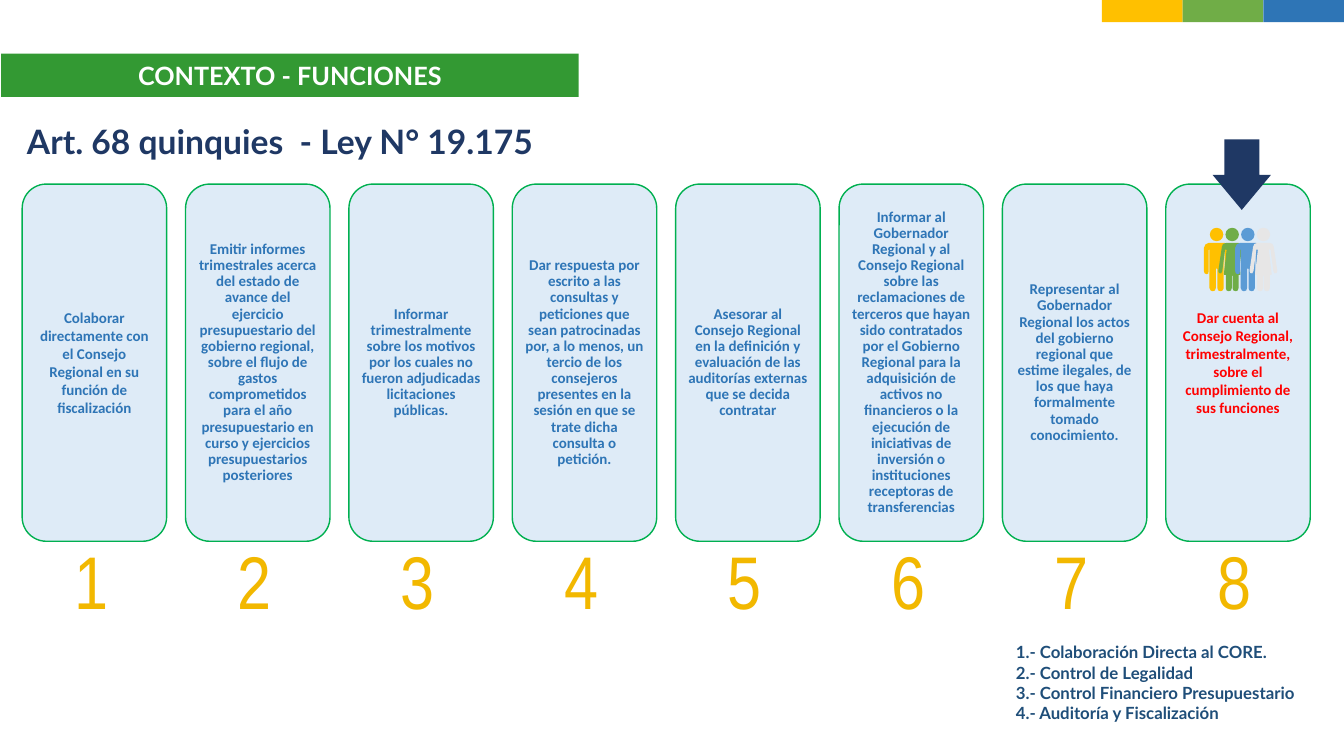
from dataclasses import dataclass

from lxml import etree
from pptx import Presentation
from pptx import util as u
from pptx.dml import color
from pptx.enum import shapes, text
from pptx.oxml import ns


@dataclass(frozen=True)
class Theme:
    """Colours, fonts and type sizes of the slide."""
    white: str = "FFFFFF"
    yellow: str = "FFC000"
    green: str = "70AD47"
    blue: str = "2E75B6"
    sky: str = "5B9BD5"
    grey: str = "E7E6E6"
    banner: str = "339933"
    navy: str = "1F3864"
    legend: str = "1F4E79"
    card: str = "DEEBF7"
    card_line: str = "00B050"
    alert: str = "FF0000"
    number: str = "F2B800"
    heading_font: str = "Lato"
    card_font: str = "Calibri"
    number_font: str = "Arial Narrow"
    banner_size: float = 18
    heading_size: float = 24
    card_size: float = 10.7
    number_size: float = 53.3
    legend_size: float = 12


THEME = Theme()

FUNCTIONS = [
    "Colaborar directamente con el Consejo Regional en su función de fiscalización",
    "Emitir informes trimestrales acerca del estado de avance del ejercicio presupuestario del gobierno "
    "regional, sobre el flujo de gastos comprometidos para el año presupuestario en curso y ejercicios "
    "presupuestarios posteriores",
    "Informar trimestralmente sobre los motivos por los cuales no fueron adjudicadas licitaciones públicas.",
    "Dar respuesta por escrito a las consultas y peticiones que sean patrocinadas por, a lo menos, un tercio "
    "de los consejeros presentes en la sesión en que se trate dicha consulta o petición.",
    "Asesorar al Consejo Regional en la definición y evaluación de las auditorías externas que se decida contratar",
    "Informar al Gobernador Regional y al Consejo Regional sobre las reclamaciones de terceros que hayan sido "
    "contratados por el Gobierno Regional para la adquisición de activos no financieros o la ejecución de "
    "iniciativas de inversión o instituciones receptoras de transferencias",
    "Representar al Gobernador Regional los actos del gobierno regional que estime ilegales, de los que haya "
    "formalmente tomado conocimiento.",
    "Dar cuenta al Consejo Regional, trimestralmente, sobre el cumplimiento de sus funciones",
]

ROLES = [
    "1.- Colaboración Directa al CORE.",
    "2.- Control de Legalidad",
    "3.- Control Financiero Presupuestario",
    "4.- Auditoría y Fiscalización",
]

TROUSERS = [
    (0.2, 0.38), (0.28, 0.42), (0.32, 0.51), (0.32, 1.09), (0.3, 1.15), (0.25, 1.17),
    (0.21, 1.15), (0.2, 1.09), (0.2, 0.56), (0.19, 0.54), (0.18, 0.56), (0.18, 1.52),
    (0.15, 1.58), (0.1, 1.6), (0.04, 1.58), (0.02, 1.52), (0.02, 1.04), (0, 1.02),
]
DRESS = [
    (0.15, 0.38), (0.23, 0.41), (0.26, 0.48), (0.35, 1.09), (0.33, 1.14), (0.28, 1.15),
    (0.25, 1.09), (0.18, 0.56), (0.16, 0.54), (0.14, 0.56), (0.21, 1.17), (0.2, 1.19),
    (0.16, 1.19), (0.16, 1.52), (0.14, 1.58), (0.09, 1.6), (0.03, 1.58), (0.01, 1.52),
    (0.01, 1.22), (0, 1.19),
]


def paint(shape, fill, line=None):
    """Give a shape a flat fill, an optional outline and no shadow."""
    shape.shadow.inherit = False
    shape.fill.solid()
    shape.fill.fore_color.rgb = color.RGBColor.from_string(fill)
    if line:
        shape.line.color.rgb = color.RGBColor.from_string(line)
        shape.line.width = u.Pt(1)
    else:
        shape.line.fill.background()
    return shape


def add_block(container, kind, box, fill, line=None):
    """Add a painted preset shape in a box given in centimetres."""
    return paint(container.add_shape(kind, *map(u.Cm, box)), fill, line)


def write_text(shape, words, *, font, size, tint, bold=True, align=text.PP_ALIGN.CENTER,
               anchor=text.MSO_ANCHOR.MIDDLE, spacing=1.0, inset=0.13):
    """Write one paragraph per line of words with the given format."""
    frame = shape.text_frame
    frame.text = words
    frame.word_wrap = True
    frame.auto_size = text.MSO_AUTO_SIZE.NONE
    frame.vertical_anchor = anchor
    frame.margin_left = frame.margin_right = u.Cm(inset)
    frame.margin_top = frame.margin_bottom = u.Cm(inset)
    for paragraph in frame.paragraphs:
        paragraph.alignment = align
        paragraph.line_spacing = spacing
        paragraph.space_before = paragraph.space_after = u.Pt(0)
        paragraph.font.name = font
        paragraph.font.size = u.Pt(size)
        paragraph.font.bold = bold
        paragraph.font.color.rgb = color.RGBColor.from_string(tint)


def place(shape, box):
    """Move a placeholder to a box given in centimetres."""
    shape.left, shape.top, shape.width, shape.height = map(u.Cm, box)
    return shape


def add_stripe(slide, box):
    """Split the box into three equal colour bands."""
    left, top, width, height = box
    band = width / 3
    for index, fill in enumerate((THEME.yellow, THEME.green, THEME.blue)):
        add_block(slide.shapes, shapes.MSO_SHAPE.RECTANGLE, (left + index * band, top, band, height), fill)


def add_header(slide, box):
    """Set the banner title at the top of the box and the law heading below it."""
    left, top, width, height = box
    banner = paint(place(slide.shapes.title, (left, top, width, 1.09)), THEME.banner)
    write_text(banner, "CONTEXTO - FUNCIONES", font=THEME.heading_font, size=THEME.banner_size, tint=THEME.white)
    heading = slide.shapes.add_textbox(*map(u.Cm, (left, top + height - 1.35, width - 0.5, 1.35)))
    write_text(heading, "Art. 68 quinquies  - Ley N° 19.175", font=THEME.heading_font,
               size=THEME.heading_size, tint=THEME.navy)


def add_cards(slide, box):
    """Spread the numbered function cards evenly across the box."""
    left, top, width, height = box
    card_width, card_height = 3.64, 9
    pitch = (width - card_width) / (len(FUNCTIONS) - 1)
    last = len(FUNCTIONS) - 1
    for index, words in enumerate(FUNCTIONS):
        x = left + index * pitch
        card = add_block(slide.shapes, shapes.MSO_SHAPE.ROUNDED_RECTANGLE, (x, top, card_width, card_height),
                         THEME.card, THEME.card_line)
        write_text(card, words, font=THEME.card_font, size=THEME.card_size,
                   tint=THEME.alert if index == last else THEME.blue,
                   spacing=1.0 if index in (0, last) else 0.9)
        number = slide.shapes.add_textbox(*map(u.Cm, (x - 0.08, top + height - 2.54, card_width, 2.54)))
        write_text(number, str(index + 1), font=THEME.number_font, size=THEME.number_size,
                   tint=THEME.number, bold=False)


def add_people(slide, box):
    """Draw four overlapping figures side by side in the box."""
    left, top, width, height = box
    group = slide.shapes.add_group_shape()
    tints = (THEME.yellow, THEME.green, THEME.sky, THEME.grey)
    first, head = 0.32, 0.34
    pitch = (width - first - 0.35) / (len(tints) - 1)
    for index, tint in enumerate(tints):
        centre = left + first + index * pitch
        add_block(group.shapes, shapes.MSO_SHAPE.OVAL, (centre - head / 2, top, head, head), tint)
        half = DRESS if index % 2 else TROUSERS
        outline = half + [(-x, y) for x, y in reversed(half)]
        points = [(u.Cm(centre + x), u.Cm(top + y * height / 1.6)) for x, y in outline]
        builder = group.shapes.build_freeform(*points[0])
        builder.add_line_segments(points[1:], close=True)
        paint(builder.convert_to_shape(), tint)


def add_arrow(slide, box):
    """Point a block arrow down at the highlighted card."""
    arrow = add_block(slide.shapes, shapes.MSO_SHAPE.DOWN_ARROW, box, THEME.navy)
    arrow.adjustments[0] = 0.6
    arrow.adjustments[1] = 0.6


def add_legend(slide, box):
    """List the four roles in the body placeholder without bullets."""
    body = place(slide.placeholders[1], box)
    write_text(body, "\n".join(ROLES), font=THEME.heading_font, size=THEME.legend_size, tint=THEME.legend,
               align=text.PP_ALIGN.LEFT, anchor=text.MSO_ANCHOR.TOP, inset=0.25)
    for paragraph in body.text_frame.paragraphs:
        properties = paragraph._p.get_or_add_pPr()
        properties.set("marL", "0")
        properties.set("indent", "0")
        bullet = etree.Element(ns.qn("a:buNone"))
        properties.find(ns.qn("a:spcAft")).addnext(bullet)


def main():
    """Build the slide and save it."""
    presentation = Presentation()
    presentation.slide_width, presentation.slide_height = u.Cm(33.87), u.Cm(19.05)
    slide = presentation.slides.add_slide(presentation.slide_layouts[1])
    add_stripe(slide, (27.77, 0, 6.1, 0.56))
    add_header(slide, (0.03, 1.35, 14.55, 2.87))
    add_cards(slide, (0.56, 4.64, 32.46, 11.24))
    add_people(slide, (30.34, 5.74, 1.85, 1.6))
    add_arrow(slide, (30.56, 3.51, 1.47, 1.78))
    add_legend(slide, (25.35, 15.93, 8.03, 2.54))
    presentation.save("out.pptx")


if __name__ == "__main__":
    main()
